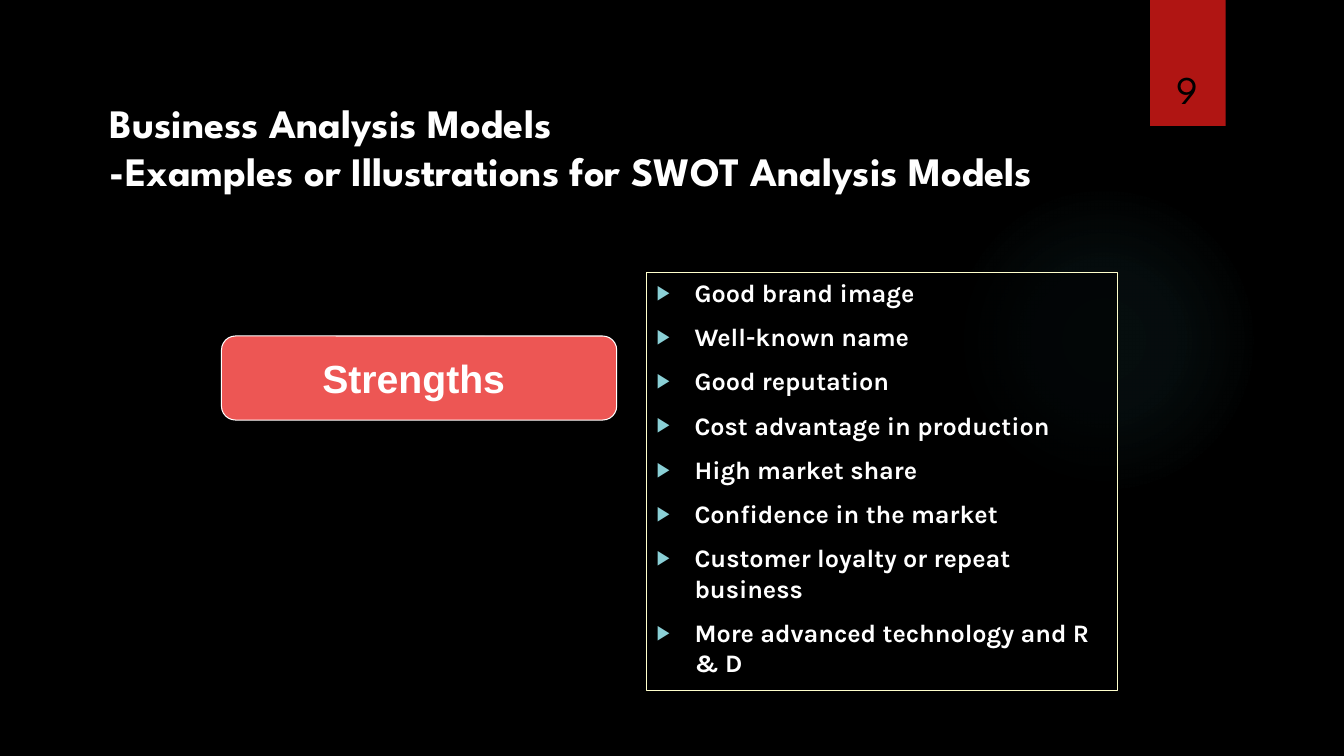
from lxml import etree
from pptx import Presentation
from pptx.dml.color import RGBColor
from pptx.enum import shapes, text
from pptx.oxml import ns
from pptx.util import Pt

TITLE = "Business Analysis Models \v-Examples or Illustrations for SWOT Analysis Models"
PAGE = "9"
LABEL = "Strengths "
POINTS = [
    "Good brand image",
    "Well-known name",
    "Good reputation",
    "Cost advantage in production",
    "High market share",
    "Confidence in the market",
    "Customer loyalty or repeat business",
    "More advanced technology and R & D",
]

BLACK = RGBColor(0x00, 0x00, 0x00)
WHITE = RGBColor(0xFF, 0xFF, 0xFF)
RED = RGBColor(0xB0, 0x15, 0x13)
CORAL = RGBColor(0xED, 0x56, 0x54)
CREAM = RGBColor(0xFF, 0xFF, 0xCC)
AQUA = RGBColor(0x8A, 0xD0, 0xD6)
TEAL = RGBColor(0x50, 0xB9, 0xC1)
GLOW = [(0, 7), (36, 6), (69, 0)]  # stop and opacity, in percent

HEAD, BODY, PLAIN = "League Spartan", "Karla", "Arial"
INDENT = 27


def add(parent, tag, **attrs):
    return etree.SubElement(parent, ns.qn(tag), {k: str(v) for k, v in attrs.items()})


def place(shape, box):
    shape.left, shape.top, shape.width, shape.height = map(Pt, box)


def draw(kind, box, fill=None, line=None):
    shape = slide.shapes.add_shape(kind, *map(Pt, box))
    shape.shadow.inherit = False
    if fill is None:
        shape.fill.background()
    else:
        shape.fill.solid()
        shape.fill.fore_color.rgb = fill
    if line is None:
        shape.line.fill.background()
    else:
        shape.line.color.rgb = line
        shape.line.width = Pt(0.75)
    return shape


def style(para, face, size, color, bold, align):
    para.alignment = align
    font = para.font
    font.name, font.size, font.bold = face, Pt(size), bold
    font.color.rgb = color


def glow(shape):
    """Fill the shape with a soft light that fades outwards."""
    old = shape.element.spPr.find(ns.qn("a:noFill"))
    grad = etree.Element(ns.qn("a:gradFill"), rotWithShape="1")
    stops = add(grad, "a:gsLst")
    for pos, alpha in GLOW:
        stop = add(stops, "a:gs", pos=pos * 1000)
        add(add(stop, "a:srgbClr", val=TEAL), "a:alpha", val=alpha * 1000)
    ring = add(grad, "a:path", path="circle")
    add(ring, "a:fillToRect", l=50000, t=50000, r=50000, b=50000)
    shape.element.spPr.replace(old, grad)


def bullet(para):
    props = para._p.get_or_add_pPr()
    props.set("marL", str(Pt(INDENT)))
    props.set("indent", str(-Pt(INDENT)))
    add(add(props, "a:buClr"), "a:srgbClr", val=AQUA)
    add(props, "a:buSzPct", val=80000)
    add(props, "a:buFont", typeface=PLAIN)
    add(props, "a:buChar", char="▶")


deck = Presentation()
deck.slide_width, deck.slide_height = Pt(960), Pt(540)
slide = deck.slides.add_slide(deck.slide_layouts[5])
slide.background.fill.solid()
slide.background.fill.fore_color.rgb = BLACK
kinds, align, anchor = shapes.MSO_SHAPE, text.PP_ALIGN, text.MSO_ANCHOR

glow(draw(kinds.OVAL, (677.5, 131.8, 221.8, 221.8)))
draw(kinds.RECTANGLE, (821.5, 0, 54, 90), RED)

title = slide.shapes.title
place(title, (71.3, 66.2, 733, 90))
title.text_frame.text = TITLE
title.text_frame.word_wrap = True
title.text_frame.auto_size = text.MSO_AUTO_SIZE.NONE
title.text_frame.vertical_anchor = anchor.TOP
style(title.text_frame.paragraphs[0], HEAD, 28.8, WHITE, True, align.LEFT)

panel = draw(kinds.RECTANGLE, (462, 194.4, 336.5, 298.8), BLACK, CREAM)
color = panel.element.spPr.find(ns.qn("a:solidFill"))[0]
add(color, "a:alpha", val=50000)
frame = panel.text_frame
frame.word_wrap = True
frame.vertical_anchor = anchor.TOP
frame.text = "\n".join(POINTS)
for i, para in enumerate(frame.paragraphs):
    para.space_before = Pt(10 if i else 0)
    bullet(para)
    style(para, BODY, 18, WHITE, True, align.LEFT)

page = slide.shapes.add_textbox(*map(Pt, (815, 23, 66.2, 60.5))).text_frame
page.word_wrap = True
page.vertical_anchor = anchor.BOTTOM
page.text = PAGE
style(page.paragraphs[0], HEAD, 28, BLACK, False, align.CENTER)

label = draw(kinds.ROUNDED_RECTANGLE, (158.2, 240, 282.3, 60), CORAL, WHITE)
label.text_frame.word_wrap = False
label.text_frame.vertical_anchor = anchor.MIDDLE
label.text_frame.text = LABEL
style(label.text_frame.paragraphs[0], PLAIN, 28, WHITE, True, align.CENTER)

deck.save("out.pptx")
